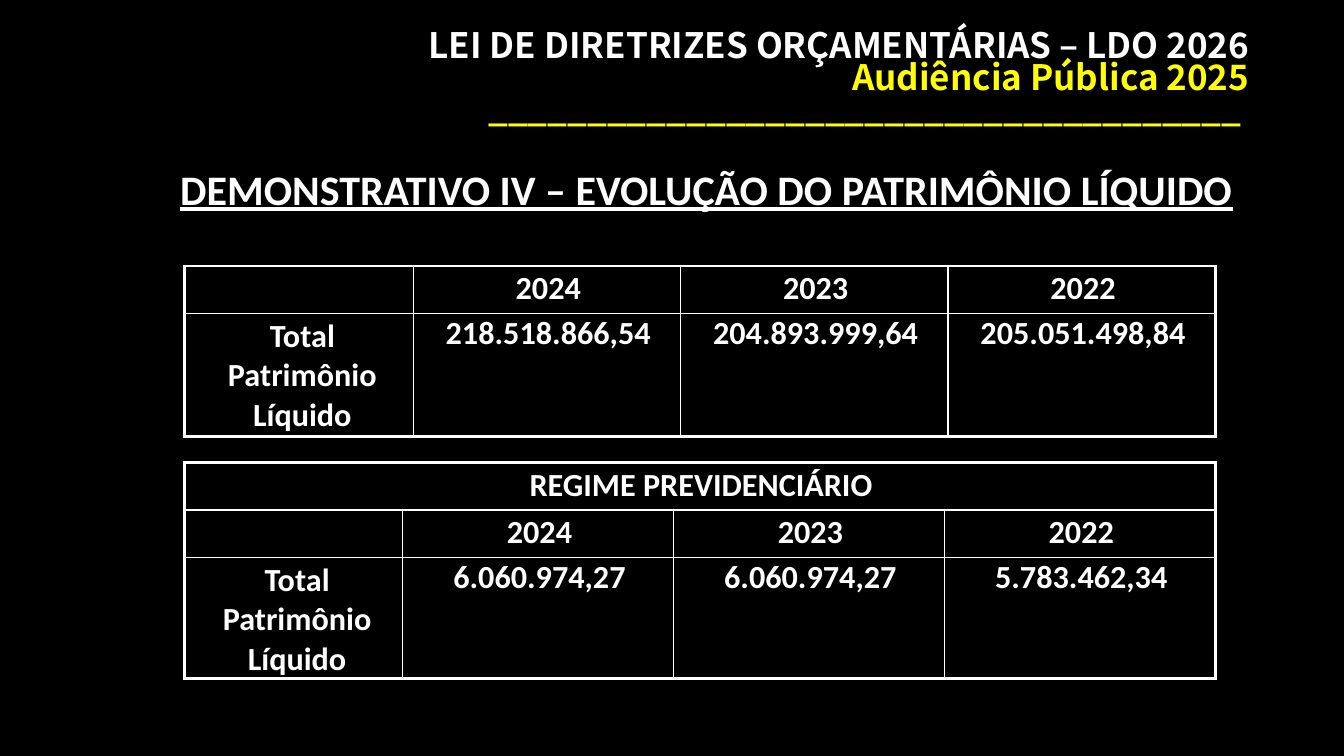
from lxml import etree
from pptx import Presentation
from pptx.dml.color import RGBColor
from pptx.enum import text
from pptx.oxml import ns
from pptx.util import Pt

THEME = {
    "back": RGBColor.from_string("000000"),
    "ink": RGBColor.from_string("FFFFFF"),
    "accent": RGBColor.from_string("FFFF00"),
    "title_font": "Noto Sans CJK JP",
    "body_font": "Calibri",
    "title_size": 25,
    "heading_size": 30,
    "cell_size": 23,
    "outer_line": 2.25,
    "inner_line": 1,
}


def add_run(p, words, font, size, color):
    r = p.add_run()
    r.text = words
    r.font.name = font
    r.font.size = Pt(size)
    r.font.bold = True
    r.font.color.rgb = color
    return r


def set_border(cell, side, width):
    tcPr = cell._tc.get_or_add_tcPr()
    ln = etree.Element(ns.qn(f"a:{side}"), w=str(Pt(width)))
    fill = etree.SubElement(ln, ns.qn("a:solidFill"))
    etree.SubElement(fill, ns.qn("a:srgbClr"), val=str(THEME["ink"]))
    tcPr.append(ln)


prs = Presentation()
prs.slide_width = Pt(960)
prs.slide_height = Pt(540)
s = prs.slides.add_slide(prs.slide_layouts[6])
s.background.fill.solid()
s.background.fill.fore_color.rgb = THEME["back"]

tf = s.shapes.add_textbox(Pt(71.3), Pt(24), Pt(828), Pt(104)).text_frame
tf.word_wrap = True
tf.margin_top = tf.margin_bottom = 0
title_lines = [
    ("LEI DE DIRETRIZES ORÇAMENTÁRIAS – LDO 2026", THEME["ink"]),
    ("Audiência Pública 2025", THEME["accent"]),
    ("_" * 38 + " ", THEME["accent"]),
]
for i, (words, color) in enumerate(title_lines):
    p = tf.paragraphs[0] if i == 0 else tf.add_paragraph()
    p.alignment = text.PP_ALIGN.RIGHT
    p.line_spacing = 0.75
    add_run(p, words, THEME["title_font"], THEME["title_size"], color)

label = "Total Patrimônio Líquido"
years = ["", "2024", "2023", "2022"]
tables = [
    {
        "top": 190,
        "cols": [163.4, 191, 191, 191],
        "heights": [33.8, 87.8],
        "rows": [years, [label, "218.518.866,54", "204.893.999,64", "205.051.498,84"]],
    },
    {
        "top": 330.5,
        "cols": [155.9, 193.5, 193.5, 193.5],
        "heights": [33.8, 33.8, 86.5],
        "rows": [
            ["REGIME PREVIDENCIÁRIO", "", "", ""],
            years,
            [label, "6.060.974,27", "6.060.974,27", "5.783.462,34"],
        ],
    },
]
for table in tables:
    cols, heights, rows = table["cols"], table["heights"], table["rows"]
    tbl = s.shapes.add_table(
        len(rows), len(cols), Pt(131.8), Pt(table["top"]), Pt(sum(cols)), Pt(sum(heights))
    ).table
    tbl.first_row = tbl.horz_banding = False
    for column, width in zip(tbl.columns, cols):
        column.width = Pt(width)
    for row, height in zip(tbl.rows, heights):
        row.height = Pt(height)
    if rows[0][0]:
        tbl.cell(0, 0).merge(tbl.cell(0, len(cols) - 1))

    for i, row in enumerate(rows):
        for j, words in enumerate(row):
            cell = tbl.cell(i, j)
            last_row = i == len(rows) - 1
            edges = {
                "lnL": j == 0 or (i == 0 and bool(rows[0][0])),
                "lnR": j == len(cols) - 1 or (i == 0 and bool(rows[0][0])),
                "lnT": i == 0,
                "lnB": last_row,
            }
            for side, outer in edges.items():
                set_border(cell, side, THEME["outer_line" if outer else "inner_line"])
            cell.fill.background()
            if not words:
                continue
            is_label = words == label
            cell.margin_left = Pt(22 if is_label else 2)
            cell.margin_right = Pt(17 if is_label else 0)
            cell.margin_top = Pt(0.5 if last_row and not is_label else 2.2)
            cell.margin_bottom = 0
            p = cell.text_frame.paragraphs[0]
            p.alignment = text.PP_ALIGN.CENTER
            add_run(p, words, THEME["body_font"], THEME["cell_size"], THEME["ink"])

tf = s.shapes.add_textbox(Pt(121.7), Pt(113), Pt(773.3), Pt(43.9)).text_frame
tf.word_wrap = False
tf.auto_size = text.MSO_AUTO_SIZE.SHAPE_TO_FIT_TEXT
r = add_run(
    tf.paragraphs[0],
    "DEMONSTRATIVO IV – EVOLUÇÃO DO PATRIMÔNIO LÍQUIDO",
    THEME["body_font"],
    THEME["heading_size"],
    THEME["ink"],
)
r.font.underline = True

prs.save("out.pptx")
